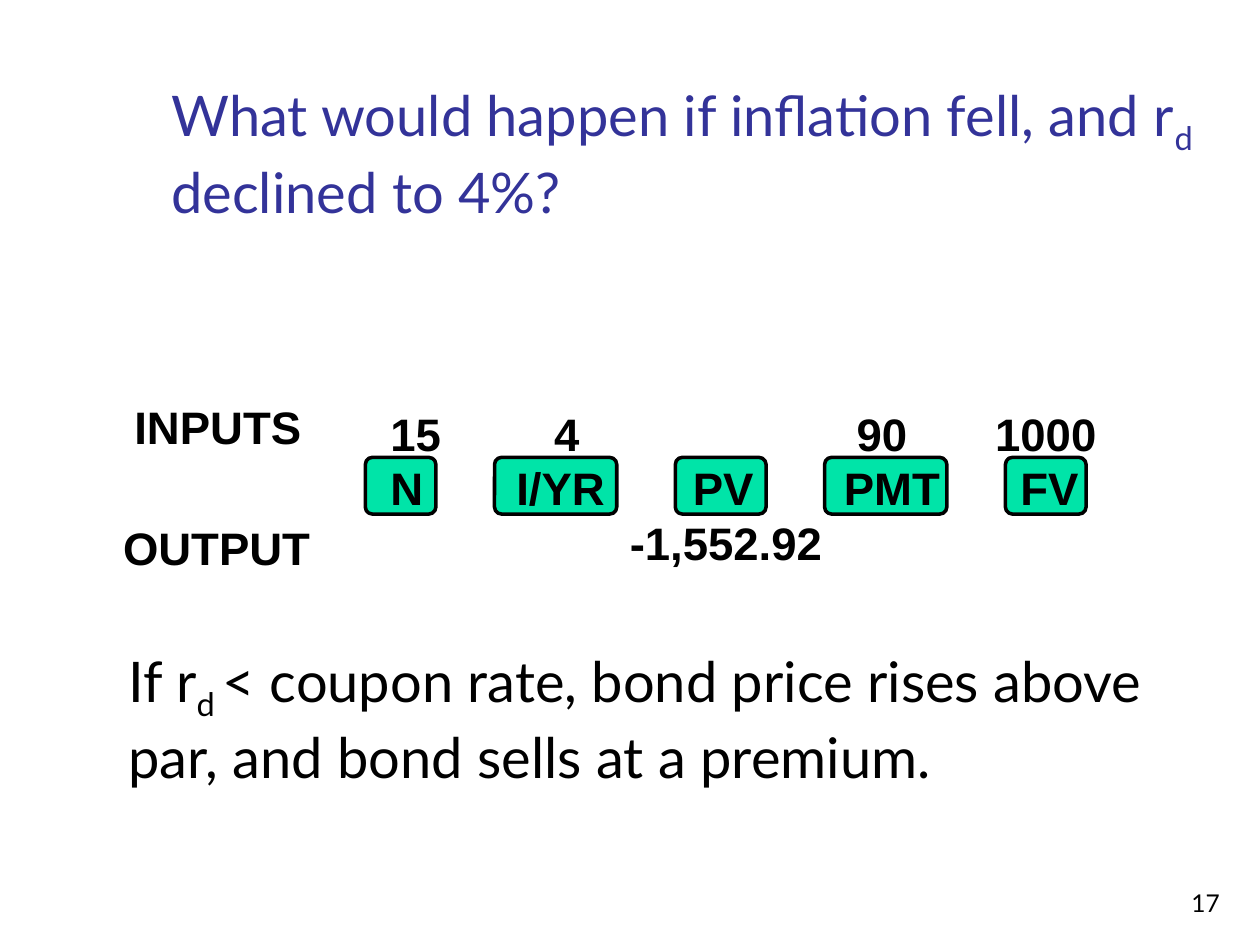
"""Build the slide on a bond's price after the required return falls to 4%."""
from dataclasses import dataclass

from lxml import etree
from pptx import Presentation
from pptx.dml import color
from pptx.enum import shapes, text
from pptx.oxml import ns
from pptx.util import Inches, Pt

BLACK, INDIGO, MINT = "000000", "333399", "00E4A8"
KEY_TOP, KEY_HEIGHT, KEY_GAP = 3.63, 0.45, 0.465


@dataclass
class Style:
    font: str
    size: float
    hex_color: str = BLACK
    bold: bool = False
    align: text.PP_ALIGN = text.PP_ALIGN.LEFT


@dataclass
class Entry:
    value: str
    tab: float


PROSE = Style("Lato", 32)
CALCULATOR = Style("Arial", 26, bold=True)
LABEL = Style("Arial", 26, bold=True, align=text.PP_ALIGN.CENTER)
KEY_WIDTHS = [0.56, 0.97, 0.72, 0.97, 0.64]
CALCULATOR_ROWS = [
    [Entry("15", 2), Entry("4", 3.3), Entry("90", 5.7), Entry("1000", 6.8)],
    [Entry("N", 2), Entry("I/YR", 3), Entry("PV", 4.4), Entry("PMT", 5.6), Entry("FV", 7)],
    [Entry("-1,552.92", 3.9)],
]


def rgb(hex_color: str) -> color.RGBColor:
    return color.RGBColor.from_string(hex_color)


def format_paragraph(paragraph, style: Style) -> None:
    paragraph.alignment = style.align
    font = paragraph.font
    font.name, font.size, font.bold = style.font, Pt(style.size), style.bold
    font.color.rgb = rgb(style.hex_color)


def write_with_subscript(frame, before: str, subscript: str, after: str, style: Style) -> None:
    paragraph = frame.paragraphs[0]
    for part in (before, subscript, after):
        run = paragraph.add_run()
        run.text = part
        if part == subscript:
            run.font._element.set("baseline", "-25000")
    format_paragraph(paragraph, style)


def add_frame(slide, left: float, top: float, width: float, height: float,
              anchor=text.MSO_ANCHOR.TOP, wrap: bool = True):
    frame = slide.shapes.add_textbox(
        Inches(left), Inches(top), Inches(width), Inches(height)).text_frame
    frame.word_wrap, frame.vertical_anchor = wrap, anchor
    return frame


def add_title(slide) -> None:
    title = slide.shapes.title
    title.left, title.top = Inches(1.26), Inches(0.23)
    title.width, title.height = Inches(8.52), Inches(1.6)
    frame = title.text_frame
    frame.auto_size = text.MSO_AUTO_SIZE.NONE
    frame.vertical_anchor = text.MSO_ANCHOR.BOTTOM
    write_with_subscript(frame, "What would happen if inflation fell, and r", "d",
                         " declined to 4%?", Style("Lato", 32, INDIGO))


def add_keys(slide) -> None:
    left = 2.9
    for width in KEY_WIDTHS:
        key = slide.shapes.add_shape(
            shapes.MSO_SHAPE.ROUNDED_RECTANGLE,
            Inches(left), Inches(KEY_TOP), Inches(width), Inches(KEY_HEIGHT))
        key.adjustments[0] = 0.125
        key.shadow.inherit = False
        key.fill.solid()
        key.fill.fore_color.rgb = rgb(MINT)
        key.line.color.rgb = rgb(BLACK)
        key.line.width = Pt(2)
        left += width + KEY_GAP


def add_calculator_rows(slide) -> None:
    frame = add_frame(slide, 1, 3.17, 8.26, 1.4)
    for index, entries in enumerate(CALCULATOR_ROWS):
        row = frame.add_paragraph() if index else frame.paragraphs[0]
        row.text = "".join(f"\t{entry.value}" for entry in entries)
        row.line_spacing = Pt(31.2)
        tabs = etree.SubElement(row._p.get_or_add_pPr(), ns.qn("a:tabLst"))
        for entry in entries:
            etree.SubElement(tabs, ns.qn("a:tab"), pos=str(Inches(entry.tab)), algn="l")
        format_paragraph(row, CALCULATOR)


def add_label(slide, label: str, left: float, top: float) -> None:
    frame = add_frame(slide, left, top, 1.54, 0.62, text.MSO_ANCHOR.MIDDLE, wrap=False)
    frame.margin_left = frame.margin_right = 0
    frame.text = label
    format_paragraph(frame.paragraphs[0], LABEL)


def main() -> None:
    deck = Presentation()
    deck.slide_width, deck.slide_height = Inches(10), Inches(7.5)
    slide = deck.slides.add_slide(deck.slide_layouts[5])

    add_title(slide)
    conclusion = add_frame(slide, 0.92, 5.08, 8.4, 1.18)
    write_with_subscript(conclusion, "If r", "d ",
                         "< coupon rate, bond price rises above par, "
                         "and bond sells at a premium.", PROSE)
    add_keys(slide)
    add_calculator_rows(slide)
    add_label(slide, "INPUTS", 0.96, 3.07)
    add_label(slide, "OUTPUT", 0.95, 4.03)

    page_number = add_frame(slide, 7.7, 6.83, 2.08, 0.5, text.MSO_ANCHOR.BOTTOM)
    page_number.text = "17"
    format_paragraph(page_number.paragraphs[0],
                     Style("Lato", 14, align=text.PP_ALIGN.RIGHT))
    deck.save("out.pptx")


if __name__ == "__main__":
    main()
